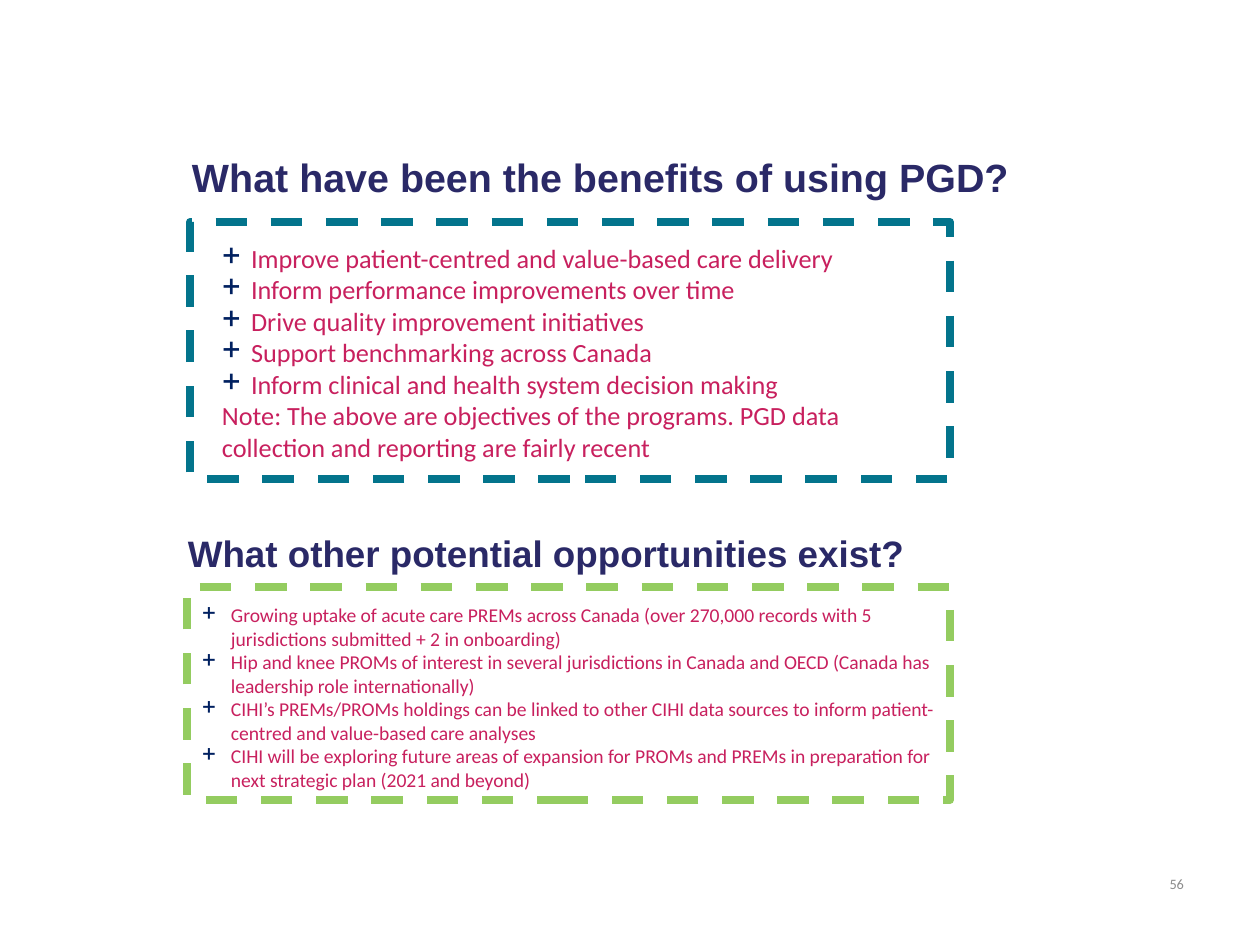
from lxml.etree import SubElement
from pptx import Presentation
from pptx.dml.color import RGBColor
from pptx.enum.dml import MSO_LINE
from pptx.enum.shapes import MSO_SHAPE
from pptx.enum.text import MSO_ANCHOR as Anchor, PP_ALIGN as Align
from pptx.oxml.ns import qn
from pptx.util import Pt

PX = 914400 // 126
NAVY = RGBColor(0x2A, 0x29, 0x67)
PINK = RGBColor(0xC8, 0x20, 0x5E)
TEAL = RGBColor(0x03, 0x74, 0x8C)
GREEN = RGBColor(0x94, 0xCC, 0x60)
GREY = RGBColor(0x8C, 0x8C, 0x8C)
WHITE = RGBColor(0xFF, 0xFF, 0xFF)
MARK = "002060"
INDENT = 29

# Boxes are left, top, width, height in px
PARTS = [
    dict(
        title="What have been the benefits of using PGD?",
        title_box=(179, 132, 892, 90), title_size=22.5, inset=(13, 6),
        frame=(190, 222, 760, 257), color=TEAL,
        text_box=(209, 236, 716, 236), size=15,
        points=[
            "Improve patient-centred and value-based care delivery",
            "Inform performance improvements over time",
            "Drive quality improvement initiatives",
            "Support benchmarking across Canada",
            "Inform clinical and health system decision making",
        ],
        note=["Note: The above are objectives of the programs. PGD data "
              "collection and reporting are fairly recent"],
    ),
    dict(
        title="What other potential opportunities exist?",
        title_box=(179, 507, 746, 91), title_size=21, inset=(9, 5),
        frame=(187, 587, 763, 213), color=GREEN,
        text_box=(189, 597, 760, 253), size=11.2,
        points=[
            "Growing uptake of acute care PREMs across Canada (over 270,000 "
            "records with 5 jurisdictions submitted + 2 in onboarding)",
            "Hip and knee PROMs of interest in several jurisdictions in Canada "
            "and OECD (Canada has leadership role internationally)",
            "CIHI’s PREMs/PROMs holdings can be linked to other CIHI data "
            "sources to inform patient-centred and value-based care analyses",
            "CIHI will be exploring future areas of expansion for PROMs and "
            "PREMs in preparation for  next strategic plan (2021 and beyond)",
        ],
        note=[],
    ),
]
NUMBER = "56"
NUMBER_BOX = (1126, 859, 71, 50)


def scale(box):
    return [v * PX for v in box]


def add_mark(para):
    """Give the paragraph a hanging plus sign as its bullet."""
    props = para._p.get_or_add_pPr()
    props.set("marL", str(INDENT * PX))
    props.set("indent", str(-INDENT * PX))
    color = SubElement(props, qn("a:buClr"))
    SubElement(color, qn("a:srgbClr"), val=MARK)
    SubElement(props, qn("a:buSzPct"), val="125000")
    SubElement(props, qn("a:buChar"), char="+")


def add_text(slide, box, lines, *, size, color, font="Calibri", bold=False,
             align=Align.LEFT, anchor=Anchor.TOP, inset=(13, 6), marked=0):
    """Add a text box whose first `marked` lines are bulleted."""
    frame = slide.shapes.add_textbox(*scale(box)).text_frame
    frame.word_wrap = True
    frame.vertical_anchor = anchor
    frame.margin_left = frame.margin_right = inset[0] * PX
    frame.margin_top = frame.margin_bottom = inset[1] * PX
    for i, line in enumerate(lines):
        para = frame.add_paragraph() if i else frame.paragraphs[0]
        para.alignment = align
        if i < marked:
            add_mark(para)
        run = para.add_run()
        run.text = line
        run.font.name = font
        run.font.size = Pt(size)
        run.font.bold = bold
        run.font.color.rgb = color


def add_frame(slide, box, color):
    rect = slide.shapes.add_shape(MSO_SHAPE.RECTANGLE, *scale(box))
    rect.shadow.inherit = False
    rect.fill.solid()
    rect.fill.fore_color.rgb = WHITE
    rect.line.color.rgb = color
    rect.line.width = Pt(4.5)
    rect.line.dash_style = MSO_LINE.DASH


def main():
    deck = Presentation()
    deck.slide_width, deck.slide_height = scale((1260, 945))
    slide = deck.slides.add_slide(deck.slide_layouts[6])
    for part in PARTS:
        add_text(slide, part["title_box"], [part["title"]],
                 size=part["title_size"], color=NAVY, font="Arial", bold=True,
                 anchor=Anchor.MIDDLE, inset=part["inset"])
        add_frame(slide, part["frame"], part["color"])
        add_text(slide, part["text_box"], part["points"] + part["note"],
                 size=part["size"], color=PINK, marked=len(part["points"]))
    add_text(slide, NUMBER_BOX, [NUMBER], size=8.2, color=GREY,
             align=Align.RIGHT, anchor=Anchor.MIDDLE)
    deck.save("out.pptx")


if __name__ == "__main__":
    main()
